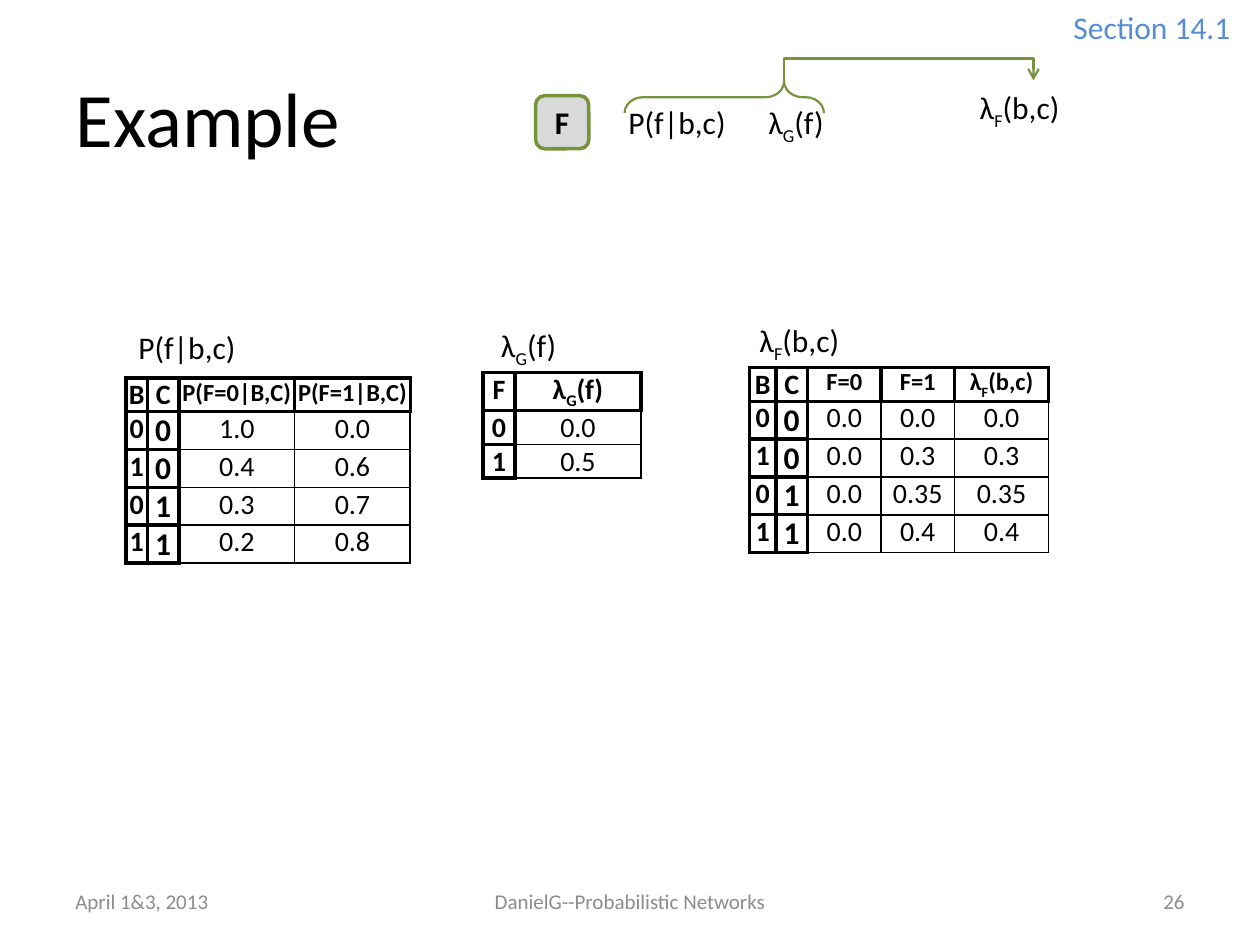
from lxml.etree import SubElement
from pptx import Presentation
from pptx.dml.color import RGBColor
from pptx.enum.shapes import MSO_CONNECTOR, MSO_SHAPE
from pptx.enum.text import MSO_ANCHOR, MSO_AUTO_SIZE, PP_ALIGN
from pptx.oxml import parse_xml
from pptx.oxml.ns import nsdecls, qn
from pptx.util import Cm, Pt

BLACK, GREY, GREEN, BLUE = "000000", "8C8C8C", "77933C", "558ED5"
LEFT, CENTER, RIGHT = PP_ALIGN.LEFT, PP_ALIGN.CENTER, PP_ALIGN.RIGHT
THICK, THIN = 2.25, 1

FOOTERS = [
    ("April 1&3, 2013", 1.27, 5.93, LEFT),
    ("DanielG--Probabilistic Networks", 8.68, 8.04, CENTER),
    ("26", 18.2, 5.93, RIGHT),
]
LABELS = [
    ("P(f|b,c)", 12.42, 1.95, 2.75, BLACK),
    ("λ_G(f)", 15.24, 1.95, 1.7, BLACK),
    ("λ_F(b,c)", 19.5, 1.65, 2.4, BLACK),
    ("P(f|b,c)", 2.54, 6.48, 2.75, BLACK),
    ("λ_G(f)", 9.85, 6.45, 1.7, BLACK),
    ("λ_F(b,c)", 15.06, 6.35, 2.4, BLACK),
    ("Section 14.1", 21.39, 0.03, 3.86, BLUE),
]
TABLES = [
    {"at": (2.54, 7.62), "cols": [0.43, 0.64, 2.33, 2.33], "keys": 2,
     "head": [16, 16, 14, 14], "body": [16, 18, 16, 16],
     "rows": [["B", "C", "P(F=0|B,C)", "P(F=1|B,C)"],
              ["0", "0", "1.0", "0.0"],
              ["1", "0", "0.4", "0.6"],
              ["0", "1", "0.3", "0.7"],
              ["1", "1", "0.2", "0.8"]]},
    {"at": (9.74, 7.51), "cols": [0.64, 2.54], "keys": 1,
     "head": [16, 16], "body": [16, 16],
     "rows": [["F", "λ_G(f)"], ["0", "0.0"], ["1", "0.5"]]},
    {"at": (15.11, 7.41), "cols": [0.53, 0.64, 1.48, 1.48, 1.9], "keys": 2,
     "head": [16, 16, 14, 14, 14], "body": [16, 18, 16, 16, 16],
     "rows": [["B", "C", "F=0", "F=1", "λ_F(b,c)"],
              ["0", "0", "0.0", "0.0", "0.0"],
              ["1", "0", "0.0", "0.3", "0.3"],
              ["0", "1", "0.0", "0.35", "0.35"],
              ["1", "1", "0.0", "0.4", "0.4"]]},
]


def rgb(value):
    return RGBColor.from_string(value)


def write(tf, text, size, color=BLACK, bold=False, align=LEFT):
    p = tf.paragraphs[0]
    p.alignment = align
    base, _, tail = text.partition("_")
    for part, offset in ((base, 0), (tail[:1], -25000), (tail[1:], 0)):
        if part:
            r = p.add_run()
            r.text = part
            fmt = {"name": "Calibri", "size": Pt(size), "bold": bold}
            for name, value in fmt.items():
                setattr(r.font, name, value)
            r.font.color.rgb = rgb(color)
            if offset:
                r.font._element.set("baseline", str(offset))


def no_margins(item):
    for side in ("left", "right", "top", "bottom"):
        setattr(item, f"margin_{side}", 0)


def add_text(s, box, text, size, color, align=LEFT):
    tf = s.shapes.add_textbox(*map(Cm, box)).text_frame
    write(tf, text, size, color, align=align)
    return tf


def outline(sp, width):
    sp.line.color.rgb = rgb(GREEN)
    sp.line.width = Pt(width)


def set_borders(cell, widths):
    tcPr = cell._tc.get_or_add_tcPr()
    for i, (side, width) in enumerate(zip("LRTB", widths)):
        tcPr.insert(i, parse_xml(
            f'<a:ln{side} {nsdecls("a")} w="{Pt(width)}"><a:solidFill>'
            f'<a:srgbClr val="{BLACK}"/></a:solidFill></a:ln{side}>'))


def add_table(s, spec):
    rows, cols, keys = spec["rows"], spec["cols"], spec["keys"]
    row_height = 0.53
    size = (sum(cols), row_height * len(rows))
    table = s.shapes.add_table(len(rows), len(cols), *map(Cm, spec["at"] + size)).table
    table.first_row = table.horz_banding = False
    for column, width in zip(table.columns, cols):
        column.width = Cm(width)
    for i, row in enumerate(rows):
        table.rows[i].height = Cm(row_height)
        for j, text in enumerate(row):
            cell = table.cell(i, j)
            no_margins(cell)
            cell.fill.background()
            strong = i == 0 or j < keys
            sizes = spec["body"] if i else spec["head"]
            write(cell.text_frame, text, sizes[j], bold=strong, align=CENTER)
            edge = THICK if strong else THIN
            left = THICK if j == keys else edge
            top = THICK if i == 1 else edge
            set_borders(cell, (left, edge, top, edge))


def add_elbow(s, center, rise, span, drop):
    x, y = center
    cx = s.shapes.add_connector(MSO_CONNECTOR.ELBOW, 0, 0, 0, 0)
    box = {"left": x - drop / 2, "top": y - span / 2, "width": drop, "height": span}
    for name, value in box.items():
        setattr(cx, name, Cm(value))
    outline(cx, 1.25)
    spPr = cx._element.spPr
    for name, value in {"rot": "5400000", "flipH": "1", "flipV": "1"}.items():
        spPr.find(qn("a:xfrm")).set(name, value)
    geom = spPr.find(qn("a:prstGeom"))
    guides = geom.find(qn("a:avLst"))
    if guides is None:
        guides = SubElement(geom, qn("a:avLst"))
    SubElement(guides, qn("a:gd"), name="adj1", fmla=f"val {round(rise / drop * 100000)}")
    SubElement(spPr.find(qn("a:ln")), qn("a:tailEnd"), type="arrow")
    SubElement(spPr, qn("a:effectLst"))


def main():
    prs = Presentation()
    prs.slide_width, prs.slide_height = Cm(25.4), Cm(19.05)
    s = prs.slides.add_slide(prs.slide_layouts[5])

    title = s.shapes.title
    box = {"left": 1.27, "top": 0.76, "width": 22.86, "height": 3.18}
    for name, value in box.items():
        setattr(title, name, Cm(value))
    title.text_frame.vertical_anchor = MSO_ANCHOR.MIDDLE
    write(title.text_frame, "Example", 44)

    for text, left, width, align in FOOTERS:
        tf = add_text(s, (left, 17.65, width, 1.02), text, 12, GREY, align)
        tf.word_wrap = True
        tf.vertical_anchor = MSO_ANCHOR.MIDDLE

    node = s.shapes.add_shape(MSO_SHAPE.ROUNDED_RECTANGLE, *map(Cm, (10.8, 1.93, 1.07, 1.07)))
    node.shadow.inherit = False
    node.fill.solid()
    node.fill.fore_color.rgb = rgb("D9D9D9")
    outline(node, 2)
    no_margins(node.text_frame)
    node.text_frame.vertical_anchor = MSO_ANCHOR.MIDDLE
    write(node.text_frame, "F", 18, bold=True, align=CENTER)

    brace = s.shapes.add_shape(MSO_SHAPE.LEFT_BRACE, *map(Cm, (14.28, -0.05, 0.64, 4.02)))
    brace.rotation = 90
    brace.adjustments[0], brace.adjustments[1] = 0.58, 0.2
    brace.shadow.inherit = False
    brace.fill.background()
    outline(brace, 1.25)
    add_elbow(s, center=(18.32, 1.64), rise=0.48, span=5.03, drop=0.04)

    for spec in TABLES:
        add_table(s, spec)
    for text, left, top, width, color in LABELS:
        tf = add_text(s, (left, top, width, 1.02), text, 18, color)
        tf.word_wrap = color == BLACK
        tf.auto_size = MSO_AUTO_SIZE.SHAPE_TO_FIT_TEXT

    prs.save("out.pptx")


if __name__ == "__main__":
    main()
